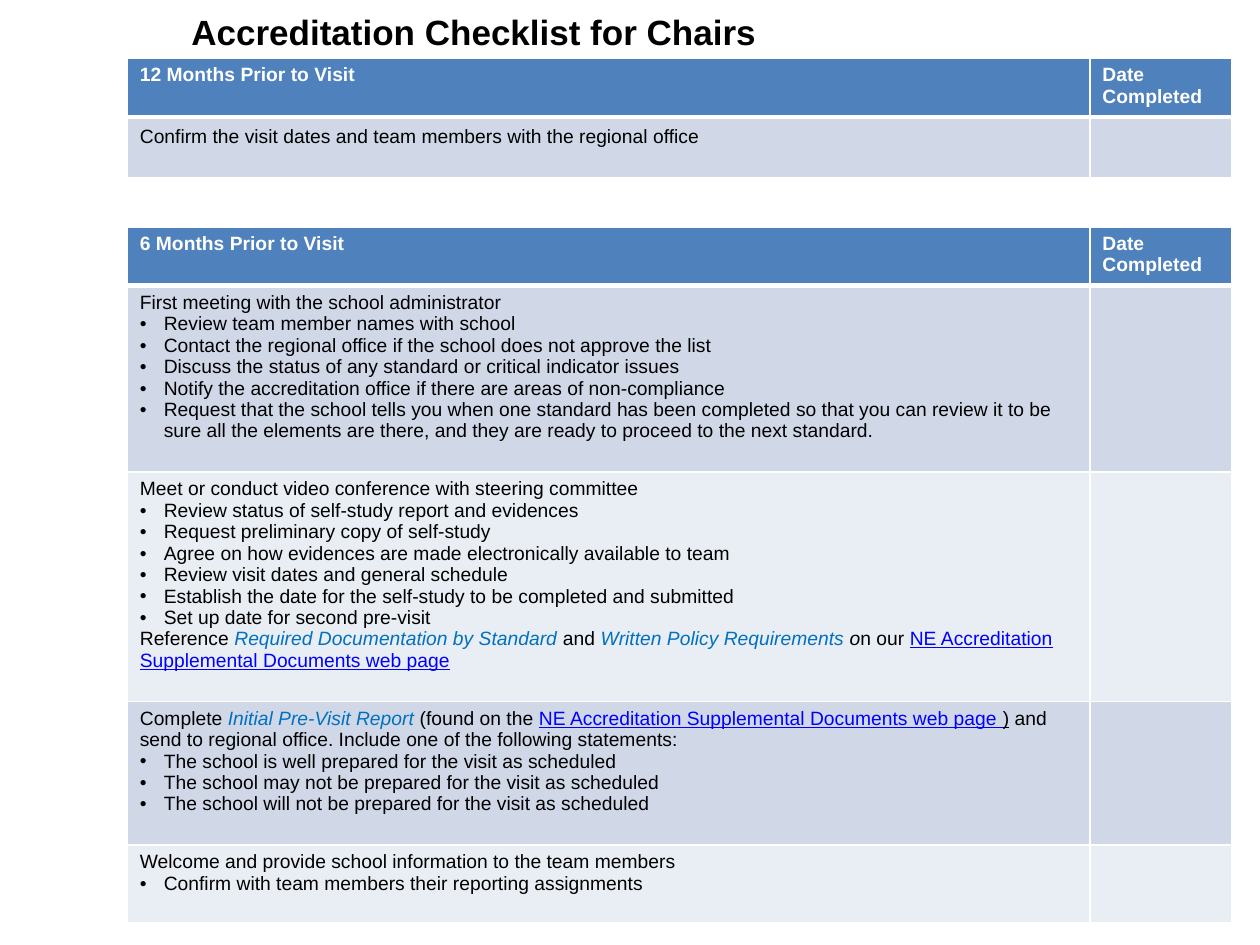
from lxml import etree
from pptx import Presentation
from pptx.dml.color import RGBColor
from pptx.enum import text
from pptx.oxml import ns
from pptx.util import Inches, Pt

HUES = {"head": "4F81BD", "odd": "D0D8E8", "even": "E9EDF4", "line": "FFFFFF",
        "light": "FFFFFF", "ink": "000000", "doc": "0070C0", "link": "0000FF"}
STYLES = {"plain": ("ink", False, False), "doc": ("doc", True, False),
          "slant": ("ink", True, False), "link": ("link", False, True),
          "under": ("ink", False, True)}

TITLE = "Accreditation Checklist for Chairs"
DONE = "Date Completed"
COLS = (7.64, 1.13)
LEFT = 1.01

YEAR = [(0.48, ["Confirm the visit dates and team members with the regional office"])]
HALF = [
    (1.48, ["First meeting with the school administrator",
            "• Review team member names with school",
            "• Contact the regional office if the school does not approve the list",
            "• Discuss the status of any standard or critical indicator issues",
            "• Notify the accreditation office if there are areas of non-compliance",
            "• Request that the school tells you when one standard has been completed so that "
            "you can review it to be sure all the elements are there, and they are ready to "
            "proceed to the next standard."]),
    (1.82, ["Meet or conduct video conference with steering committee",
            "• Review status of self-study report and evidences",
            "• Request preliminary copy of self-study",
            "• Agree on how evidences are made electronically available to team",
            "• Review visit dates and general schedule",
            "• Establish the date for the self-study to be completed and submitted",
            "• Set up date for second pre-visit",
            [("Reference ", "plain"), ("Required Documentation by Standard ", "doc"),
             ("and ", "plain"), ("Written Policy Requirements ", "doc"), ("o", "slant"),
             ("n our ", "plain"),
             ("NE Accreditation Supplemental Documents web page", "link")]]),
    (1.14, [[("Complete ", "plain"), ("Initial Pre-Visit Report ", "doc"),
             ("(found on the ", "plain"),
             ("NE Accreditation Supplemental Documents web page ", "link"), (")", "under"),
             (" and send to regional office. Include one of the following statements:",
              "plain")],
            "• The school is well prepared for the visit as scheduled",
            "• The school may not be prepared for the visit as scheduled",
            "• The school will not be prepared for the visit as scheduled"]),
    (0.62, ["Welcome and provide school information to the team members",
            "• Confirm with team members their reporting assignments"]),
]
TABLES = [("12 Months Prior to Visit", 0.46, YEAR, 1.15),
          ("6 Months Prior to Visit", 1.8, HALF, None)]


def hue(name):
    return RGBColor.from_string(HUES[name])


def style(font, size, color, bold=False):
    font.name, font.size, font.bold = "Arial", Pt(size), bold
    font.color.rgb = hue(color)


def bullet(para):
    props = para._p.get_or_add_pPr()
    props.set("marL", str(Inches(0.19)))
    props.set("indent", str(-Inches(0.19)))
    etree.SubElement(props, ns.qn("a:buFont")).set("typeface", "Arial")
    etree.SubElement(props, ns.qn("a:buChar")).set("char", "•")


def paint(cell, color, top, base):
    cell.fill.solid()
    cell.fill.fore_color.rgb = hue(color)
    props = cell._tc.get_or_add_tcPr()
    for spot, (side, width) in enumerate(zip("LRTB", (1, 1, top, base))):
        line = etree.Element(ns.qn("a:ln" + side), w=str(Pt(width)))
        fill = etree.SubElement(line, ns.qn("a:solidFill"))
        etree.SubElement(fill, ns.qn("a:srgbClr")).set("val", HUES["line"])
        props.insert(spot, line)


def write(cell, items, space):
    frame = cell.text_frame
    for spot, item in enumerate(items):
        para = frame.add_paragraph() if spot else frame.paragraphs[0]
        if space:
            para.line_spacing = space
        if isinstance(item, str):
            if item.startswith("• "):
                bullet(para)
            para.text = item.removeprefix("• ")
            style(para.font, 11, "ink")
            continue
        style(para.font, 11, "ink")
        for words, kind in item:
            run = para.add_run()
            run.text = words
            color, slant, under = STYLES[kind]
            style(run.font, 11, color)
            run.font.italic, run.font.underline = slant, under


def build(slide, head, top, rows, space):
    highs = [0.44] + [high for high, _ in rows]
    grid = slide.shapes.add_table(len(highs), 2, Inches(LEFT), Inches(top),
                                  Inches(sum(COLS)), Inches(sum(highs))).table
    for col, wide in zip(grid.columns, COLS):
        col.width = Inches(wide)
    for row, high in zip(grid.rows, highs):
        row.height = Inches(high)
    for cell, words in zip(grid.rows[0].cells, (head, DONE)):
        cell.text = words
        style(cell.text_frame.paragraphs[0].font, 11, "light", True)
        paint(cell, "head", 1, 3)
    for num, (_, items) in enumerate(rows, 1):
        write(grid.cell(num, 0), items, space)
        for cell in grid.rows[num].cells:
            paint(cell, "odd" if num % 2 else "even", 3 if num == 1 else 1, 1)


deck = Presentation()
deck.slide_width, deck.slide_height = Inches(10), Inches(7.5)
slide = deck.slides.add_slide(deck.slide_layouts[6])
box = slide.shapes.add_textbox(Inches(1.42), 0, Inches(8.08), Inches(0.68))
frame = box.text_frame
frame.word_wrap = True
frame.margin_top = Inches(0.08)
frame.vertical_anchor = text.MSO_ANCHOR.TOP
frame.text = TITLE
style(frame.paragraphs[0].font, 20, "ink", True)
for entry in TABLES:
    build(slide, *entry)
deck.save("out.pptx")
